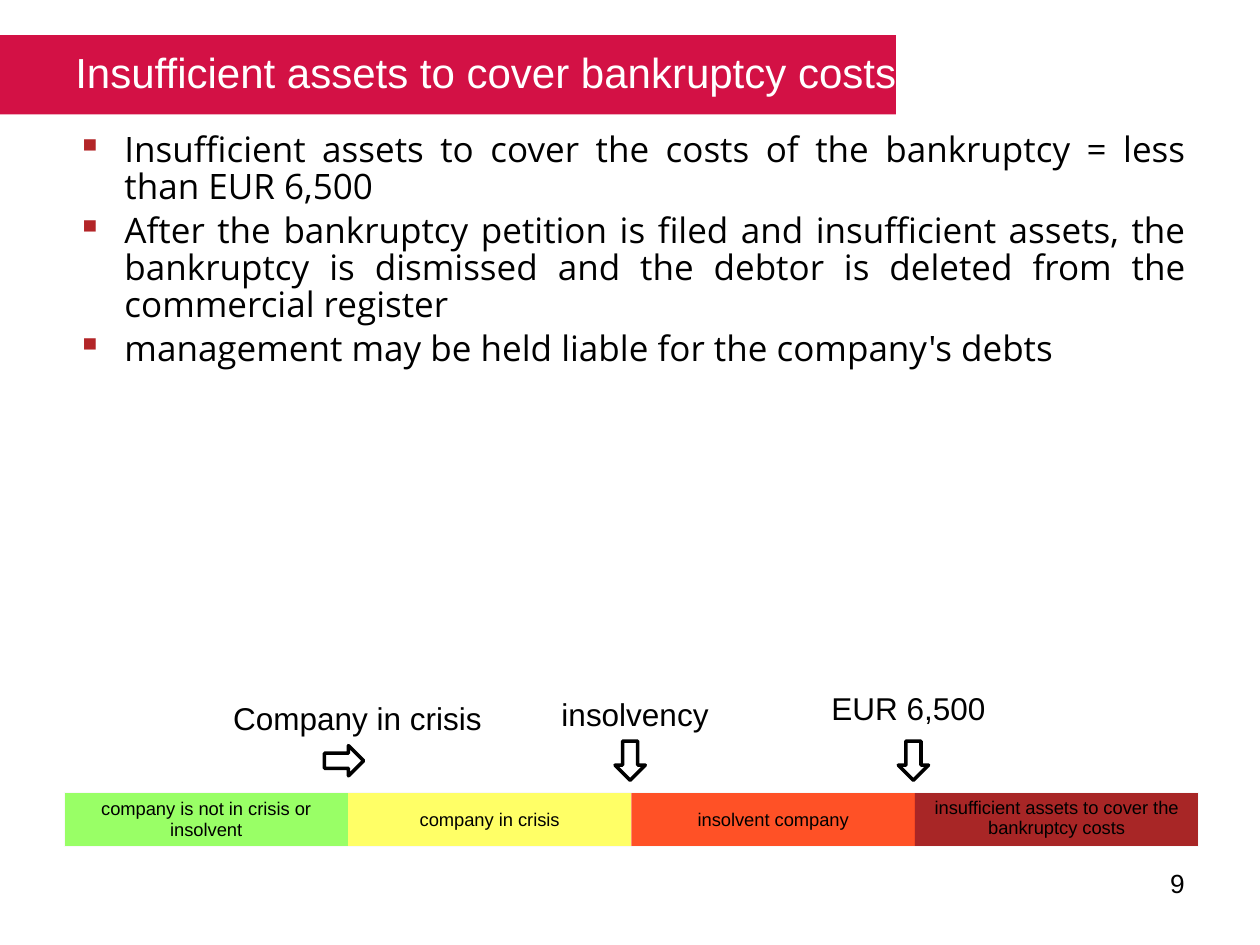
from dataclasses import dataclass

import pptx
import pptx.dml.color
import pptx.enum.shapes
import pptx.enum.text
import pptx.oxml
import pptx.oxml.ns
import pptx.util
from pptx.util import Cm

ALIGN = pptx.enum.text.PP_ALIGN
ANCHOR = pptx.enum.text.MSO_ANCHOR
SHAPE = pptx.enum.shapes.MSO_SHAPE
NAMESPACE = pptx.oxml.ns.nsdecls("a")

COLOURS = {
    "black": "000000",
    "white": "FFFFFF",
    "banner": "D31145",
    "bullet": "B32528",
    "border": "F9F9F9",
    "healthy": "99FF66",
    "crisis": "FFFF66",
    "insolvent": "FF3300",
    "no assets": "990000",
}


@dataclass
class Stage:
    text: str
    colour: str
    anchor: ANCHOR = ANCHOR.MIDDLE
    opacity: int = 100


@dataclass
class Label:
    text: str
    left: float
    top: float
    width: float


@dataclass
class Arrow:
    left: float
    rotation: int = 0


STAGES = [
    Stage("company is not in crisis or insolvent", "healthy"),
    Stage("company in crisis", "crisis"),
    Stage("insolvent company", "insolvent", opacity=85),
    Stage("insufficient assets to cover the bankruptcy costs", "no assets", ANCHOR.TOP, 85),
]
LABELS = [
    Label("EUR 6,500", 16.51, 13.77, 3.81),
    Label("insolvency", 11.07, 13.89, 3.99),
    Label("Company in crisis", 4.45, 13.97, 5.79),
]
ARROWS = [Arrow(18.11), Arrow(12.4), Arrow(6.63, 270)]
POINTS = [
    "Insufficient assets to cover the costs of the bankruptcy = less than EUR 6,500",
    "After the bankruptcy petition is filed and insufficient assets, the bankruptcy "
    "is dismissed and the debtor is deleted from the commercial register",
    "management may be held liable for the company's debts",
]


def rgb(name: str) -> pptx.dml.color.RGBColor:
    return pptx.dml.color.RGBColor.from_string(COLOURS[name])


def set_all(target, values: dict) -> None:
    for name, value in values.items():
        setattr(target, name, value)


def write(para, text: str, size: float, colour: str = "black", font: str = "Arial") -> None:
    span = para.add_run()
    span.text = text
    set_all(span.font, {"size": pptx.util.Pt(size), "name": font})
    span.font.color.rgb = rgb(colour)


def add_text(slide, left: float, top: float, width: float, height: float, **frame_values):
    """Add an empty wrapping text box, in centimetres, and return its frame."""
    box = slide.shapes.add_textbox(Cm(left), Cm(top), Cm(width), Cm(height))
    set_all(box.text_frame, {"word_wrap": True, **frame_values})
    return box.text_frame


def add_banner(slide) -> None:
    banner = slide.shapes.add_shape(SHAPE.RECTANGLE, Cm(-0.05), Cm(0.71), Cm(18.11), Cm(1.6))
    banner.shadow.inherit = False
    banner.fill.solid()
    banner.fill.fore_color.rgb = rgb("banner")
    banner.line.fill.background()
    frame = add_text(slide, 1.27, 0.76, 17.22, 1.37, vertical_anchor=ANCHOR.MIDDLE)
    write(frame.paragraphs[0], "Insufficient assets to cover bankruptcy costs", 24, "white")


def add_points(slide) -> None:
    frame = add_text(slide, 1.3, 2.51, 22.86, 14.4, margin_top=Cm(0.18))
    for index, point in enumerate(POINTS):
        para = frame.add_paragraph() if index else frame.paragraphs[0]
        set_all(para, {
            "alignment": ALIGN.JUSTIFY,
            "line_spacing": 0.88,
            "space_before": pptx.util.Pt(4 if index else 0),
        })
        properties = para._p.get_or_add_pPr()
        properties.set("marL", str(Cm(0.96)))
        properties.set("indent", str(Cm(-0.96)))
        for element in (
            f'<a:buClr {NAMESPACE}><a:srgbClr val="{COLOURS["bullet"]}"/></a:buClr>',
            f'<a:buChar {NAMESPACE} char="▪"/>',
        ):
            properties.append(pptx.oxml.parse_xml(element))
        write(para, point, 20, font="Open Sans")


def add_borders(cell, first: bool, last: bool) -> None:
    """Draw the outer borders of the one-row table and clear the inner ones."""
    properties = cell._tc.get_or_add_tcPr()
    for side, drawn in {"L": first, "R": last, "T": True, "B": True}.items():
        fill = "<a:noFill/>"
        if drawn:
            fill = f'<a:solidFill><a:srgbClr val="{COLOURS["border"]}"/></a:solidFill>'
        width = pptx.util.Pt(0.75)
        properties.append(pptx.oxml.parse_xml(
            f'<a:ln{side} {NAMESPACE} w="{width}">{fill}</a:ln{side}>'))


def fill_cell(cell, stage: Stage) -> None:
    cell.fill.solid()
    cell.fill.fore_color.rgb = rgb(stage.colour)
    if stage.opacity < 100:
        colour = cell._tc.tcPr.find(".//" + pptx.oxml.ns.qn("a:solidFill") + "[last()]")
        colour = cell._tc.tcPr.findall(pptx.oxml.ns.qn("a:solidFill"))[-1][0]
        colour.append(pptx.oxml.parse_xml(
            f'<a:alpha {NAMESPACE} val="{stage.opacity * 1000}"/>'))


def add_stages(slide) -> None:
    table = slide.shapes.add_table(
        1, len(STAGES), Cm(1.3), Cm(15.98), Cm(22.86), Cm(1.05)).table
    set_all(table, {"first_row": False, "horz_banding": False})
    for index, stage in enumerate(STAGES):
        cell = table.cell(0, index)
        set_all(cell, {
            "vertical_anchor": stage.anchor,
            "margin_top": Cm(0.1),
            "margin_bottom": Cm(0.1),
        })
        add_borders(cell, index == 0, index == len(STAGES) - 1)
        fill_cell(cell, stage)
        para = cell.text_frame.paragraphs[0]
        para.alignment = ALIGN.CENTER
        write(para, stage.text, 10.5)


def add_label(slide, label: Label) -> None:
    frame = add_text(slide, label.left, label.top, label.width, 1.03,
                     auto_size=pptx.enum.text.MSO_AUTO_SIZE.SHAPE_TO_FIT_TEXT)
    write(frame.paragraphs[0], label.text, 18)


def add_arrow(slide, arrow: Arrow) -> None:
    shape = slide.shapes.add_shape(
        SHAPE.DOWN_ARROW, Cm(arrow.left), Cm(14.94), Cm(0.61), Cm(0.79))
    shape.rotation = arrow.rotation
    shape.shadow.inherit = False
    shape.fill.solid()
    shape.fill.fore_color.rgb = rgb("white")
    shape.line.color.rgb = rgb("black")
    shape.line.width = pptx.util.Pt(2)


def add_page_number(slide) -> None:
    para = add_text(slide, 18.21, 17.35, 5.92, 1.32).paragraphs[0]
    para.alignment = ALIGN.RIGHT
    write(para, "9", 15)


def main() -> None:
    deck = pptx.Presentation()
    set_all(deck, {"slide_width": Cm(25.4), "slide_height": Cm(19.05)})
    slide = deck.slides.add_slide(deck.slide_layouts[6])
    add_banner(slide)
    add_stages(slide)
    add_page_number(slide)
    add_points(slide)
    for arrow in ARROWS:
        add_arrow(slide, arrow)
    for label in LABELS:
        add_label(slide, label)
    deck.save("out.pptx")


if __name__ == "__main__":
    main()
